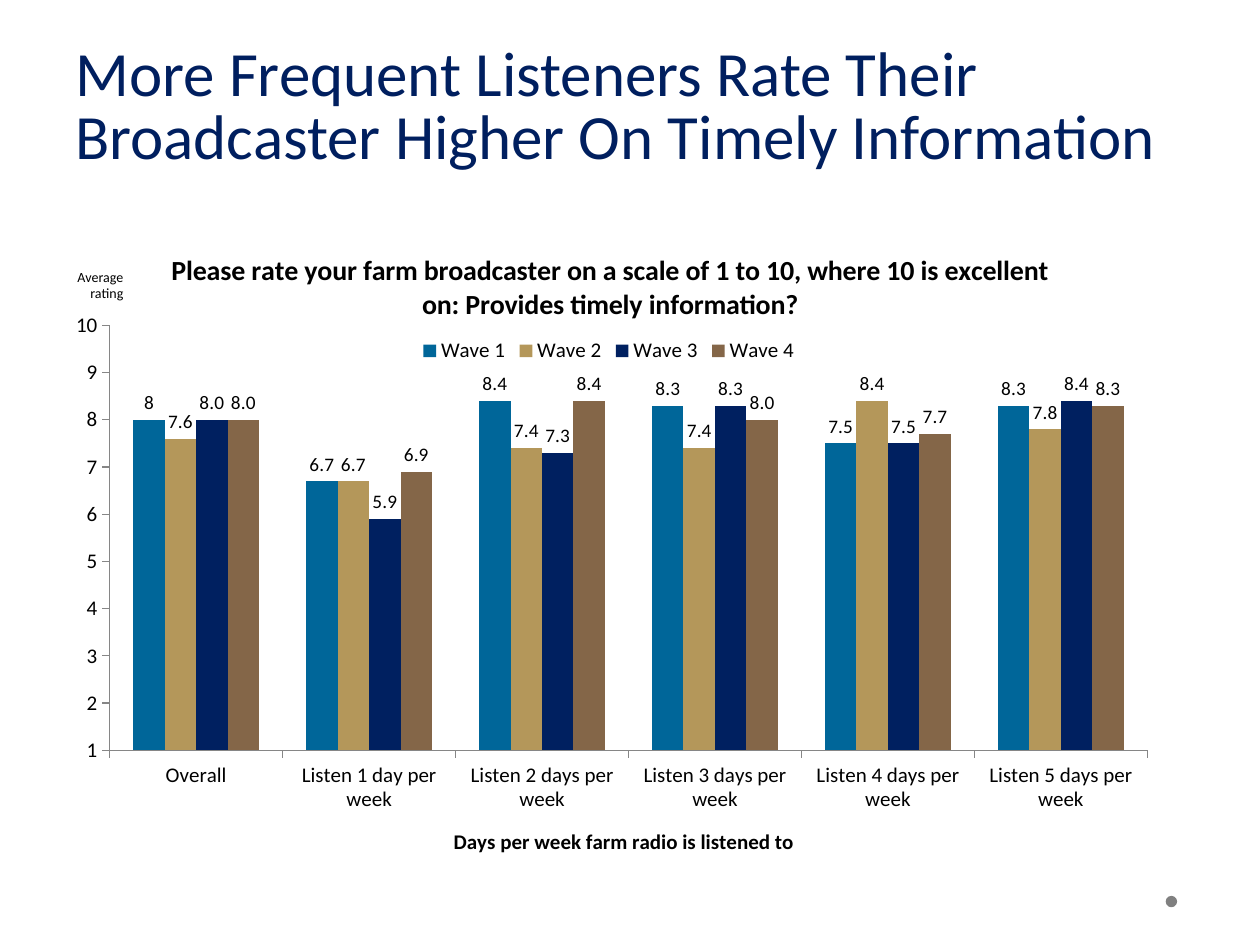
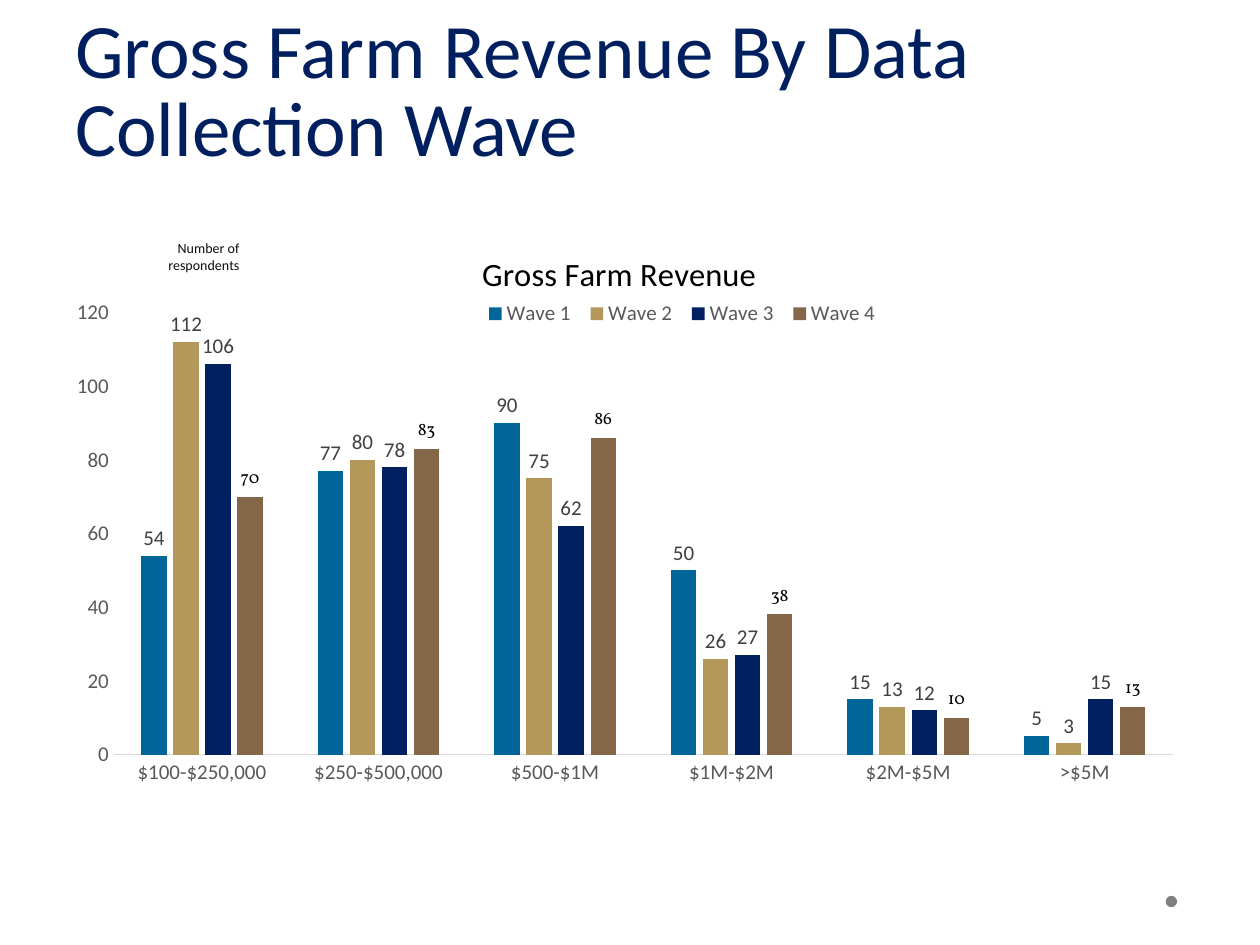
from dataclasses import dataclass

from lxml import etree
from pptx import Presentation
from pptx.chart.data import CategoryChartData
from pptx.dml.color import RGBColor
from pptx.enum.chart import XL_CHART_TYPE, XL_LABEL_POSITION, XL_LEGEND_POSITION, XL_TICK_MARK
from pptx.enum.shapes import MSO_SHAPE
from pptx.enum.text import MSO_ANCHOR, PP_ALIGN
from pptx.oxml.ns import qn
from pptx.util import Cm, Pt

CLUSTERED = XL_CHART_TYPE.COLUMN_CLUSTERED
OUTSIDE_END = XL_LABEL_POSITION.OUTSIDE_END
TOP, BOTTOM = XL_LEGEND_POSITION.TOP, XL_LEGEND_POSITION.BOTTOM
TICK_OUT, TICK_NONE = XL_TICK_MARK.OUTSIDE, XL_TICK_MARK.NONE
OVAL = MSO_SHAPE.OVAL
ANCHOR_TOP, ANCHOR_BOTTOM = MSO_ANCHOR.TOP, MSO_ANCHOR.BOTTOM
LEFT, RIGHT = PP_ALIGN.LEFT, PP_ALIGN.RIGHT


@dataclass(frozen=True)
class Theme:
    font: str = "Calibri"
    serif: str = "Vollkorn"
    navy: str = "001F5F"
    black: str = "000000"
    note: str = "0D0D0D"
    dark: str = "404040"
    grey: str = "595959"
    dot: str = "808080"
    axis: str = "868686"
    pale: str = "D9D9D9"
    waves: tuple = ("006699", "B4975A", "002060", "846648")
    small: float = 8
    serif_label: float = 10
    label: float = 11
    body: float = 12
    question: float = 16
    heading: float = 18.6


def style_font(font, size, color, name=Theme.font, bold=False):
    font.size, font.name, font.bold = Pt(size), name, bold
    font.color.rgb = RGBColor.from_string(color)


def write_text(tf, text, size, color, align=None, spacing=None, bold=False):
    for i, line in enumerate(text.split("\n")):
        p = tf.paragraphs[0] if i == 0 else tf.add_paragraph()
        p.alignment = align
        p.line_spacing = Pt(spacing) if spacing else None
        r = p.add_run()
        r.text = line
        style_font(r.font, size, color, bold=bold)


def set_layout(element, index, x, y, w=None, h=None, inner=False):
    for old in element.findall(qn("c:layout")):
        element.remove(old)
    layout = etree.Element(qn("c:layout"))
    manual = etree.SubElement(layout, qn("c:manualLayout"))
    values = {"layoutTarget": "inner" if inner else None, "xMode": "edge", "yMode": "edge",
              "x": x, "y": y, "w": w, "h": h}
    for tag, value in values.items():
        if value is not None:
            etree.SubElement(manual, qn(f"c:{tag}")).set("val", str(value))
    element.insert(index, layout)


class Deck:
    def __init__(self, theme):
        self.theme = theme
        self.prs = Presentation()
        self.prs.slide_width, self.prs.slide_height = Cm(25.4), Cm(19.05)
        self.s = None

    def slide(self, title, size, spacing):
        self.s = self.prs.slides.add_slide(self.prs.slide_layouts[6])
        dot = self.s.shapes.add_shape(OVAL, Cm(23.5), Cm(18.06), Cm(0.23), Cm(0.23))
        dot.shadow.inherit = False
        dot.fill.solid()
        dot.fill.fore_color.rgb = RGBColor.from_string(self.theme.dot)
        dot.line.fill.background()
        self.text(title, (1.27, 0, 22.86, 3.6), size=size, color=self.theme.navy,
                  anchor=ANCHOR_BOTTOM, spacing=spacing)

    def text(self, text, box, anchor=ANCHOR_TOP, wrap=True, align=LEFT, **style):
        tf = self.s.shapes.add_textbox(*map(Cm, box)).text_frame
        tf.word_wrap, tf.vertical_anchor = wrap, anchor
        write_text(tf, text, align=align, **style)

    def chart(self, box, categories, waves, plot_box, gap, overlap=0):
        data = CategoryChartData()
        data.categories = categories
        for i, values in enumerate(waves, 1):
            data.add_series(f"Wave {i}", values)
        chart = self.s.shapes.add_chart(CLUSTERED, *map(Cm, box), data).chart
        style_font(chart.font, self.theme.body, self.theme.black)
        plot = chart.plots[0]
        plot.gap_width, plot.overlap, plot.vary_by_categories = gap, overlap, False
        for series, color in zip(plot.series, self.theme.waves):
            series.format.fill.solid()
            series.format.fill.fore_color.rgb = RGBColor.from_string(color)
            series.invert_if_negative = False
        set_layout(chart.plots[0]._element.getparent(), 0, *plot_box, inner=True)
        return chart

    def chart_title(self, owner, text, size, spot, bold):
        title = owner.chart_title if hasattr(owner, "chart_title") else owner.axis_title
        write_text(title.text_frame, text, size, self.theme.black, bold=bold)
        set_layout(title._element, 1, *spot)

    def legend(self, chart, position, color, box):
        chart.has_legend = True
        chart.legend.position = position
        chart.legend.include_in_layout = False
        style_font(chart.legend.font, self.theme.body, color)
        set_layout(chart.legend._element, 1, *box)

    def axis(self, axis, tick, color, line):
        axis.has_major_gridlines = False
        axis.major_tick_mark, axis.minor_tick_mark = tick, TICK_NONE
        style_font(axis.tick_labels.font, self.theme.body, color)
        if line:
            axis.format.line.width = Pt(0.75)
            axis.format.line.color.rgb = RGBColor.from_string(line)
        else:
            axis.format.line.fill.background()

    def scale(self, axis, low, high, step):
        axis.minimum_scale, axis.maximum_scale, axis.major_unit = low, high, step

    def labels(self, series, size, color, name=Theme.font, number_format="General"):
        labels = series.data_labels
        labels.show_value, labels.position = True, OUTSIDE_END
        labels.number_format, labels.number_format_is_linked = number_format, False
        style_font(labels.font, size, color, name)


def timely_information(deck):
    t = deck.theme
    deck.slide("More Frequent Listeners Rate Their Broadcaster Higher On Timely Information", 36, 36)
    days = ["Listen 1 day per week"] + [f"Listen {n} days per week" for n in range(2, 6)]
    ratings = [
        (8, 6.7, 8.4, 8.3, 7.5, 8.3),
        (7.6, 6.7, 7.4, 7.4, 8.4, 7.8),
        (8, 5.9, 7.3, 8.3, 7.5, 8.4),
        (8, 6.9, 8.4, 8, 7.7, 8.3),
    ]
    chart = deck.chart((0.84, 4.45, 22.86, 12.9), ["Overall"] + days, ratings,
                       (0.06, 0.165, 0.915, 0.67), gap=150)
    deck.chart_title(chart, "Please rate your farm broadcaster on a scale of 1 to 10, where 10 is "
                     "excellent on: Provides timely information?", t.question, (0.11, 0.04), True)
    deck.legend(chart, TOP, t.black, (0.33, 0.18, 0.34, 0.05))
    for axis in (chart.category_axis, chart.value_axis):
        deck.axis(axis, TICK_OUT, t.black, t.axis)
    deck.scale(chart.value_axis, 1, 10, 1)
    deck.chart_title(chart.category_axis, "Days per week farm radio is listened to", t.body,
                     (0.36, 0.95), True)
    for i, series in enumerate(chart.plots[0].series):
        deck.labels(series, t.label, t.black, number_format="0.0" if i else "General")
    deck.text("Average\nrating", (1.27, 5.28, 1.47, 0.94), wrap=False, align=RIGHT,
              size=t.small, color=t.black)


def farm_revenue(deck):
    t = deck.theme
    deck.slide("Gross Farm Revenue By Data Collection Wave", 44, 45)
    brackets = ["$100-$250,000", "$250-$500,000", "$500-$1M", "$1M-$2M", "$2M-$5M", ">$5M"]
    respondents = [
        (54, 77, 90, 50, 15, 5),
        (112, 80, 75, 26, 13, 3),
        (106, 78, 62, 27, 12, 15),
        (70, 83, 86, 38, 10, 13),
    ]
    chart = deck.chart((0.84, 4.45, 23.06, 12.5), brackets, respondents,
                       (0.063, 0.148, 0.926, 0.713), gap=219, overlap=-27)
    deck.chart_title(chart, "Gross Farm Revenue", t.heading, (0.38, 0.04), False)
    deck.legend(chart, BOTTOM, t.grey, (0.38, 0.125, 0.36, 0.05))
    deck.axis(chart.category_axis, TICK_NONE, t.grey, t.pale)
    deck.axis(chart.value_axis, TICK_NONE, t.grey, None)
    deck.scale(chart.value_axis, 0, 120, 20)
    *sans_waves, serif_wave = chart.plots[0].series
    for series in sans_waves:
        deck.labels(series, t.body, t.dark)
    deck.labels(serif_wave, t.serif_label, t.black, t.serif)
    deck.text("Number of\nrespondents", (2.77, 4.7, 2.31, 0.94), align=RIGHT,
              size=t.small, color=t.note)


def main():
    deck = Deck(Theme())
    timely_information(deck)
    farm_revenue(deck)
    deck.prs.save("out.pptx")


if __name__ == "__main__":
    main()
